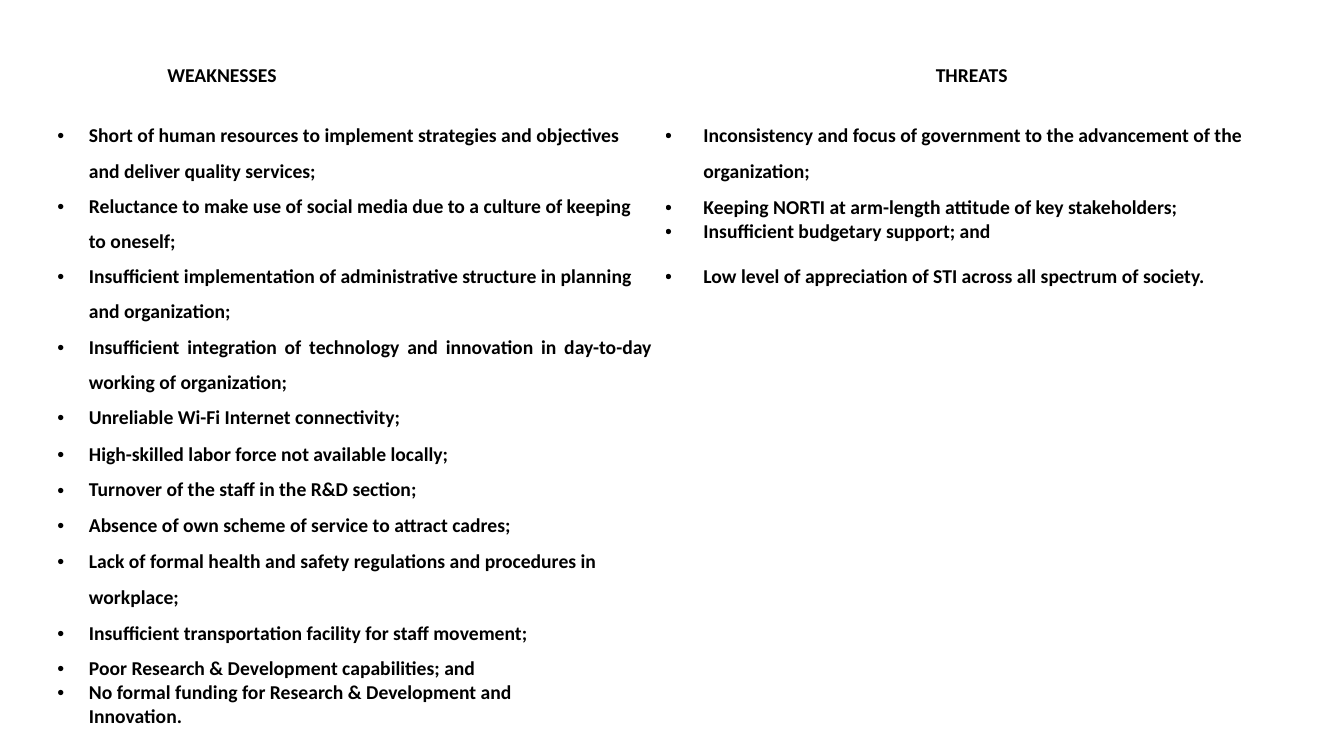
"""Build the slide that lists weaknesses and threats in a two-column table."""
from dataclasses import dataclass

from pptx import Presentation
from pptx.dml.color import RGBColor
from pptx.enum.text import PP_ALIGN
from pptx.oxml.ns import qn
from pptx.util import Pt
from lxml import etree

BLACK = RGBColor(0, 0, 0)
WHITE = RGBColor(255, 255, 255)
LEFT, CENTER, JUSTIFY = PP_ALIGN.LEFT, PP_ALIGN.CENTER, PP_ALIGN.JUSTIFY
BLANK_LAYOUT = 6
HEADING_TOP, LIST_TOP = 17, 16.2


@dataclass
class Item:
    text: str
    spacing: float = 1.5
    before: float = 0
    align: PP_ALIGN = LEFT
    right: float = 16


@dataclass
class Column:
    heading: str
    heading_indent: float
    heading_right: float
    heading_align: PP_ALIGN
    width: float
    bullet_indent: float
    items: list[Item]


COLUMNS = [
    Column("WEAKNESSES", 78.5, 0, LEFT, 434.2, 22.5, [
        Item("Short of human resources to implement strategies and objectives "
             "and deliver quality services;"),
        Item("Reluctance to make use of social media due to a culture of "
             "keeping to oneself;", 1.47),
        Item("Insufficient implementation of administrative structure in "
             "planning and organization;", 1.47, 0.3),
        Item("Insufficient integration of technology and innovation in "
             "day-to-day working of organization;", 1.47, 0.5, JUSTIFY, 9.4),
        Item("Unreliable Wi-Fi Internet connectivity;", 1.46, 0.2),
        Item("High-skilled labor force not available locally;", 1.5, 0.5),
        Item("Turnover of the staff in the R&D section;"),
        Item("Absence of own scheme of service to attract cadres;"),
        Item("Lack of formal health and safety regulations and procedures in "
             "workplace;"),
        Item("Insufficient transportation facility for staff movement;"),
        Item("Poor Research & Development capabilities; and"),
        Item("No formal funding for Research & Development and Innovation.",
             1, right=80),
    ]),
    Column("THREATS", 88.5, 85.5, CENTER, 434.8, 27.3, [
        Item("Inconsistency and focus of government to the advancement of "
             "the organization;"),
        Item("Keeping NORTI at arm-length attitude of key stakeholders;",
             1.5, 0.1),
        Item("Insufficient budgetary support; and", 1),
        Item("Low level of appreciation of STI across all spectrum of "
             "society.", 1.5, 6.8),
    ]),
]


def prepare_cell(cell, top: float) -> None:
    """Clear the fill and margins, leaving a gap above the text."""
    cell.fill.solid()
    cell.fill.fore_color.rgb = WHITE
    cell.margin_left = cell.margin_right = cell.margin_bottom = 0
    cell.margin_top = Pt(top)


def format_paragraph(p, text: str, align: PP_ALIGN, left: float, right: float):
    """Write bold text between indents and return the paragraph properties."""
    p.text = text
    p.alignment = align
    p.font.name = "Calibri"
    p.font.size = Pt(14)
    p.font.bold = True
    p.font.color.rgb = BLACK
    pPr = p._p.get_or_add_pPr()
    pPr.set("marL", str(Pt(left)))
    pPr.set("marR", str(Pt(right)))
    return pPr


def add_bullet(p, item: Item, indent: float) -> None:
    """Format one bulleted paragraph with a hanging indent."""
    pPr = format_paragraph(p, item.text, item.align, indent, item.right)
    p.line_spacing = item.spacing
    p.space_before = Pt(item.before)
    pPr.set("indent", str(-Pt(indent)))
    font = etree.Element(qn("a:buFont"), typeface="Arial")
    char = etree.Element(qn("a:buChar"), char="•")
    position = pPr.index(pPr.find(qn("a:defRPr")))
    pPr[position:position] = [font, char]


def fill_column(table, index: int, column: Column) -> None:
    """Fill the heading cell and the list cell of one column."""
    table.columns[index].width = Pt(column.width)
    heading, body = table.cell(0, index), table.cell(1, index)
    prepare_cell(heading, HEADING_TOP)
    prepare_cell(body, LIST_TOP)
    format_paragraph(heading.text_frame.paragraphs[0], column.heading,
                     column.heading_align, column.heading_indent,
                     column.heading_right)
    tf = body.text_frame
    for number, item in enumerate(column.items):
        p = tf.add_paragraph() if number else tf.paragraphs[0]
        add_bullet(p, item, column.bullet_indent)


def main() -> None:
    """Create the presentation and save it."""
    prs = Presentation()
    prs.slide_width, prs.slide_height = Pt(960), Pt(540)
    s = prs.slides.add_slide(prs.slide_layouts[BLANK_LAYOUT])
    table = s.shapes.add_table(2, len(COLUMNS), Pt(41), Pt(28.8),
                               Pt(869), Pt(468)).table
    table.rows[0].height, table.rows[1].height = Pt(35), Pt(433)
    for index, column in enumerate(COLUMNS):
        fill_column(table, index, column)
    prs.save("out.pptx")


if __name__ == "__main__":
    main()
